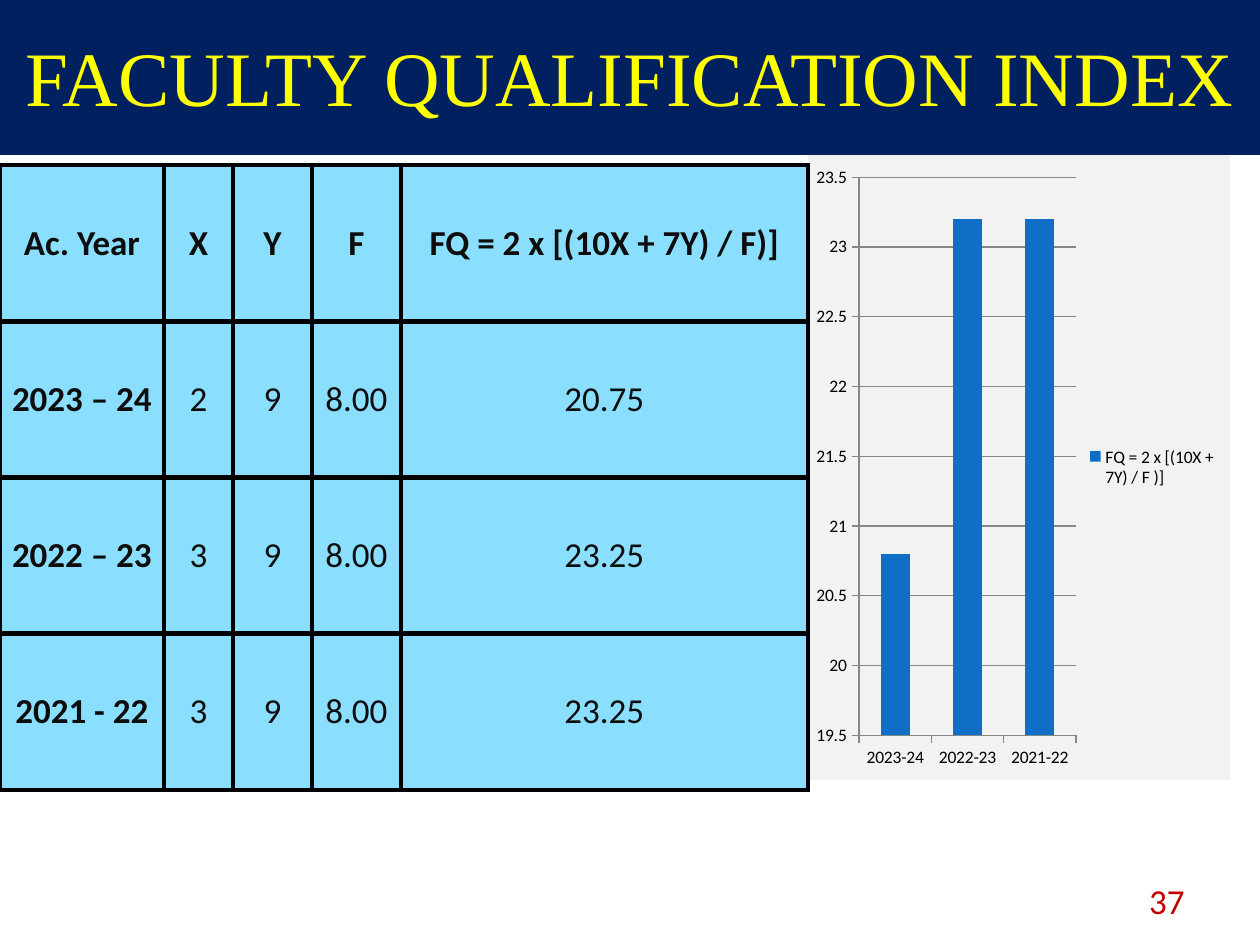
import dataclasses

import pptx
import pptx.chart.data
import pptx.dml.color
import pptx.enum.chart
import pptx.enum.shapes
import pptx.enum.text
import pptx.oxml
import pptx.oxml.ns
import pptx.util

EMU_PER_PX = 914400 / 126


@dataclasses.dataclass(frozen=True)
class Theme:
    navy: str = "002060"
    yellow: str = "FFFF00"
    cell: str = "8ADFFF"
    ink: str = "0D0D0D"
    black: str = "000000"
    panel: str = "F2F2F2"
    bar: str = "0F6FC6"
    axis: str = "868686"
    red: str = "C00000"
    heading_font: str = "Times New Roman"
    body_font: str = "Calibri"
    title_size: int = 44
    body_size: int = 20
    chart_size: int = 10
    border_width: int = 3


THEME = Theme()
YEARS = ["2023-24", "2022-23", "2021-22"]
INDEX_VALUES = [20.8, 23.2, 23.2]
ROWS = [
    ["Ac. Year", "X", "Y", "F", "FQ = 2 x [(10X + 7Y) / F)]"],
    ["2023 – 24", "2", "9", "8.00", "20.75"],
    ["2022 – 23", "3", "9", "8.00", "23.25"],
    ["2021 - 22", "3", "9", "8.00", "23.25"],
]
COLUMN_WIDTHS = [164, 69, 79, 89, 407]


def px(length):
    return pptx.util.Emu(round(length * EMU_PER_PX))


def place(box):
    return [px(length) for length in box]


def color(value):
    return pptx.dml.color.RGBColor.from_string(value)


def paint(fill, value):
    fill.solid()
    fill.fore_color.rgb = color(value)


def assign(target, values):
    for name, value in values.items():
        setattr(target, name, value)


def style_font(font, family, size, value, bold=False):
    assign(font, {"name": family, "size": pptx.util.Pt(size), "bold": bold})
    font.color.rgb = color(value)


def write(frame, text, alignment, **font_format):
    paragraph = frame.paragraphs[0]
    paragraph.alignment = alignment
    run = paragraph.add_run()
    run.text = text
    style_font(run.font, **font_format)
    return paragraph


def add_title(slide, box, text):
    shape = slide.shapes.add_shape(pptx.enum.shapes.MSO_SHAPE.RECTANGLE, *place(box))
    shape.shadow.inherit = False
    paint(shape.fill, THEME.navy)
    shape.line.fill.background()
    assign(shape.text_frame, {
        "word_wrap": True,
        "vertical_anchor": pptx.enum.text.MSO_ANCHOR.MIDDLE,
    })
    write(shape.text_frame, text, pptx.enum.text.PP_ALIGN.CENTER,
          family=THEME.heading_font, size=THEME.title_size, value=THEME.yellow)


def add_borders(cell):
    properties = cell._tc.get_or_add_tcPr()
    width = pptx.util.Pt(THEME.border_width)
    for index, side in enumerate(["lnL", "lnR", "lnT", "lnB"]):
        properties.insert(index, pptx.oxml.parse_xml(
            f'<a:{side} {pptx.oxml.ns.nsdecls("a")} w="{width}"><a:solidFill>'
            f'<a:srgbClr val="{THEME.black}"/></a:solidFill></a:{side}>'))


def add_index_table(slide, box):
    table = slide.shapes.add_table(len(ROWS), len(COLUMN_WIDTHS), *place(box)).table
    for column, width in zip(table.columns, COLUMN_WIDTHS):
        column.width = px(width)
    for row in table.rows:
        row.height = px(box[3] / len(ROWS))
    for row_index, texts in enumerate(ROWS):
        for column_index, text in enumerate(texts):
            cell = table.cell(row_index, column_index)
            assign(cell, {
                "margin_left": px(9), "margin_right": px(9),
                "margin_top": 0, "margin_bottom": 0,
                "vertical_anchor": pptx.enum.text.MSO_ANCHOR.MIDDLE,
            })
            paint(cell.fill, THEME.cell)
            add_borders(cell)
            paragraph = write(cell.text_frame, text, pptx.enum.text.PP_ALIGN.CENTER,
                              family=THEME.body_font, size=THEME.body_size,
                              value=THEME.ink, bold=row_index == 0 or column_index == 0)
            paragraph.space_after = pptx.util.Pt(10)


def add_index_chart(slide, box):
    data = pptx.chart.data.CategoryChartData()
    data.categories = YEARS
    data.add_series("FQ = 2 x [(10X + 7Y) / F )]", INDEX_VALUES)
    chart = slide.shapes.add_chart(
        pptx.enum.chart.XL_CHART_TYPE.COLUMN_CLUSTERED, *place(box), data).chart
    assign(chart, {"has_title": False, "has_legend": True})
    style_font(chart.font, THEME.body_font, THEME.chart_size, THEME.black)
    assign(chart.legend, {
        "position": pptx.enum.chart.XL_LEGEND_POSITION.RIGHT,
        "include_in_layout": False,
    })
    assign(chart.plots[0], {"gap_width": 150, "vary_by_categories": False})
    paint(chart.plots[0].series[0].format.fill, THEME.bar)
    assign(chart.value_axis, {
        "minimum_scale": 19.5, "maximum_scale": 23.5, "major_unit": 0.5,
        "has_major_gridlines": True,
    })
    for axis in (chart.category_axis, chart.value_axis):
        axis.major_tick_mark = pptx.enum.chart.XL_TICK_MARK.OUTSIDE
    for part in (chart.category_axis, chart.value_axis, chart.value_axis.major_gridlines):
        part.format.line.color.rgb = color(THEME.axis)
        part.format.line.width = pptx.util.Pt(0.75)
    chart._chartSpace.chart.addnext(pptx.oxml.parse_xml(
        f'<c:spPr {pptx.oxml.ns.nsdecls("c", "a")}><a:solidFill>'
        f'<a:srgbClr val="{THEME.panel}"/></a:solidFill>'
        '<a:ln><a:noFill/></a:ln></c:spPr>'))


def add_page_number(slide, box, text):
    frame = slide.shapes.add_textbox(*place(box)).text_frame
    assign(frame, {
        "word_wrap": True,
        "vertical_anchor": pptx.enum.text.MSO_ANCHOR.MIDDLE,
    })
    write(frame, text, pptx.enum.text.PP_ALIGN.RIGHT,
          family=THEME.body_font, size=THEME.body_size, value=THEME.red)


def main():
    presentation = pptx.Presentation()
    assign(presentation, {"slide_width": px(1260), "slide_height": px(945)})
    slide = presentation.slides.add_slide(presentation.slide_layouts[6])
    add_title(slide, (0, -4, 1260, 159), "FACULTY QUALIFICATION INDEX")
    add_index_chart(slide, (808, 155, 422, 625))
    add_index_table(slide, (0, 165, sum(COLUMN_WIDTHS), 625))
    add_page_number(slide, (903, 876, 294, 50), "37")
    presentation.save("out.pptx")


if __name__ == "__main__":
    main()
